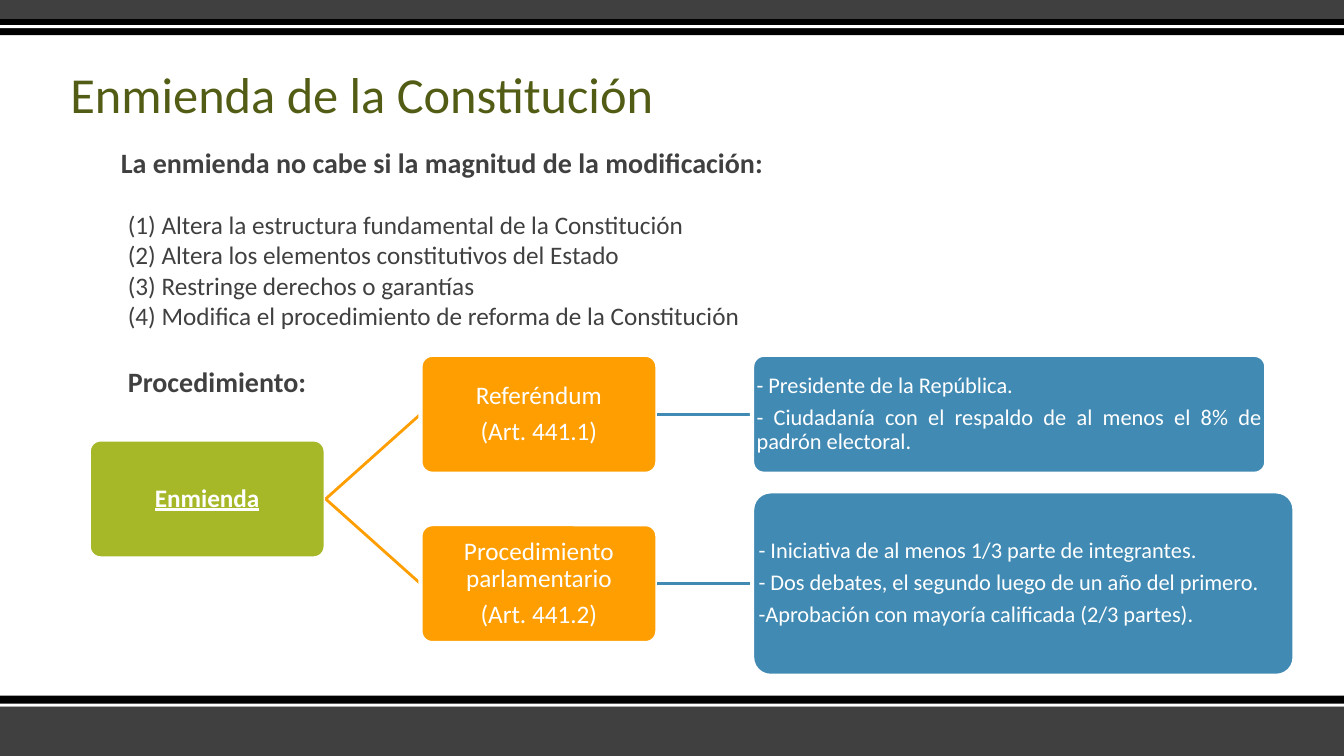
from lxml import etree
from pptx import Presentation
from pptx.dml.color import RGBColor
from pptx.enum.shapes import MSO_CONNECTOR, MSO_SHAPE
from pptx.enum.text import MSO_ANCHOR, PP_ALIGN
from pptx.oxml.ns import qn
from pptx.util import Inches, Pt

RECT, ROUNDED = MSO_SHAPE.RECTANGLE, MSO_SHAPE.ROUNDED_RECTANGLE
STRAIGHT = MSO_CONNECTOR.STRAIGHT
TOP, MIDDLE, BOTTOM = MSO_ANCHOR.TOP, MSO_ANCHOR.MIDDLE, MSO_ANCHOR.BOTTOM
LEFT, CENTER, JUSTIFY = PP_ALIGN.LEFT, PP_ALIGN.CENTER, PP_ALIGN.JUSTIFY

COLORS = {"black": "000000", "white": "FFFFFF", "gray": "404040", "olive": "535C14",
          "green": "A6B727", "orange": "FE9E00", "blue": "418AB3"}
SLIDE_W, SLIDE_H = 13.33, 7.5

# Content
TITLE = "Enmienda de la Constitución"
LIMITS_HEADING = "La enmienda no cabe si la magnitud de la modificación:"
LIMITS = [
    "(1) Altera la estructura fundamental de la Constitución",
    "(2) Altera los elementos constitutivos del Estado",
    "(3) Restringe derechos o garantías",
    "(4) Modifica el procedimiento de reforma de la Constitución",
]
PROCEDURE_HEADING = "Procedimiento:"
ROOT = "Enmienda"
BRANCHES = [
    {"name": ["Referéndum", "(Art. 441.1)"], "detail_size": (5.1, 1.18),
     "detail": ["- Presidente de la República.",
                "- Ciudadanía con el respaldo de al menos el 8% de padrón electoral."]},
    {"name": ["Procedimiento parlamentario", "(Art. 441.2)"], "detail_size": (5.38, 1.83),
     "detail": ["- Iniciativa de al menos 1/3 parte de integrantes.",
                "- Dos debates, el segundo luego de un año del primero.",
                "-Aprobación con mayoría calificada (2/3 partes)."]},
]
# Frame bands: top, height, color
BANDS = [(7, 0.5, "gray"), (6.9, 0.11, "black"), (6.98, 0.03, "white"),
         (0, 0.19, "gray"), (0.19, 0.16, "black"), (0.25, 0.03, "white")]

# Tree layout
NODE_W, NODE_H, GAP = 2.35, 1.18, 0.94
ROOT_X, ROOT_Y = 0.88, 4.95
BRANCH_X = ROOT_X + NODE_W + GAP
DETAIL_X = BRANCH_X + NODE_W + GAP
BRANCH_STEP = 1.68

prs = Presentation()
prs.slide_width, prs.slide_height = Inches(SLIDE_W), Inches(SLIDE_H)
slide = prs.slides.add_slide(prs.slide_layouts[6])


def rgb(name):
    return RGBColor.from_string(COLORS[name])


def write(frame, lines, color, anchor=TOP, inset=None, **common):
    """Each line is its text and a dict of formats that add to the common ones."""
    frame.word_wrap = True
    frame.vertical_anchor = anchor
    if inset is not None:
        for side in ("left", "right", "top", "bottom"):
            setattr(frame, "margin_" + side, Inches(inset))
    for i, (text, own) in enumerate(lines):
        formats = {"alignment": LEFT, **common, **own}
        paragraph = frame.paragraphs[0] if i == 0 else frame.add_paragraph()
        run = paragraph.add_run()
        run.text = text
        run.font.name = "Calibri"
        run.font.color.rgb = rgb(color)
        indent = formats.pop("indent", 0)
        paragraph._p.get_or_add_pPr().set("marL", str(Inches(indent)))
        for key, value in formats.items():
            target = run.font if key in ("size", "bold", "underline") else paragraph
            setattr(target, key, value)


def add_box(kind, x, y, w, h, color):
    box = slide.shapes.add_shape(kind, Inches(x), Inches(y), Inches(w), Inches(h))
    box.shadow.inherit = False
    box.fill.solid()
    box.fill.fore_color.rgb = rgb(color)
    box.line.fill.background()
    return box


def add_node(x, center_y, w, h, color, texts, size, align=CENTER, **formats):
    node = add_box(ROUNDED, x, center_y - h / 2, w, h, color)
    node.adjustments[0] = 0.1
    node.line.color.rgb = rgb("white")
    node.line.width = Pt(3)
    write(node.text_frame, [(text, {}) for text in texts], "white", MIDDLE, 0.01,
          size=Pt(size), alignment=align, line_spacing=0.9,
          space_after=Pt(0.35 * size), **formats)


def add_link(x, from_y, to_y, color):
    link = slide.shapes.add_connector(STRAIGHT, Inches(x), Inches(from_y),
                                      Inches(x + GAP), Inches(to_y))
    link.line.color.rgb = rgb(color)
    link.line.width = Pt(2)
    etree.SubElement(link._element.spPr, qn("a:effectLst"))


def add_text(x, y, w, h, lines, color, **formats):
    area = slide.shapes.add_textbox(Inches(x), Inches(y), Inches(w), Inches(h))
    write(area.text_frame, lines, color, **formats)


# Frame and title
for top, height, color in BANDS:
    add_box(RECT, 0, top, SLIDE_W, height, color)
add_text(0.6, 0.4, 11.5, 0.88, [(TITLE, {})], "olive", anchor=BOTTOM,
         size=Pt(36), line_spacing=0.9)

# Tree
add_node(ROOT_X, ROOT_Y, NODE_W, NODE_H, "green", [ROOT], 18, bold=True, underline=True)
for i, branch in enumerate(BRANCHES):
    y = ROOT_Y + (i - 0.5) * BRANCH_STEP
    add_link(ROOT_X + NODE_W, ROOT_Y, y, "orange")
    add_node(BRANCH_X, y, NODE_W, NODE_H, "orange", branch["name"], 18)
    add_link(BRANCH_X + NODE_W, y, y, "blue")
    add_node(DETAIL_X, y, *branch["detail_size"], "blue", branch["detail"], 16, JUSTIFY)

# Limits of the amendment
heading = {"size": Pt(20), "bold": True}
limits = [(text, {"size": Pt(18), "indent": 0.5}) for text in LIMITS]
limits[0][1]["space_before"] = Pt(22)
add_text(0.67, 1.39, 11.36, 2.62,
         [(LIMITS_HEADING, {**heading, "indent": 0.43}), *limits,
          (PROCEDURE_HEADING, {**heading, "indent": 0.5, "space_before": Pt(24.4)})], "gray")

prs.save("out.pptx")
